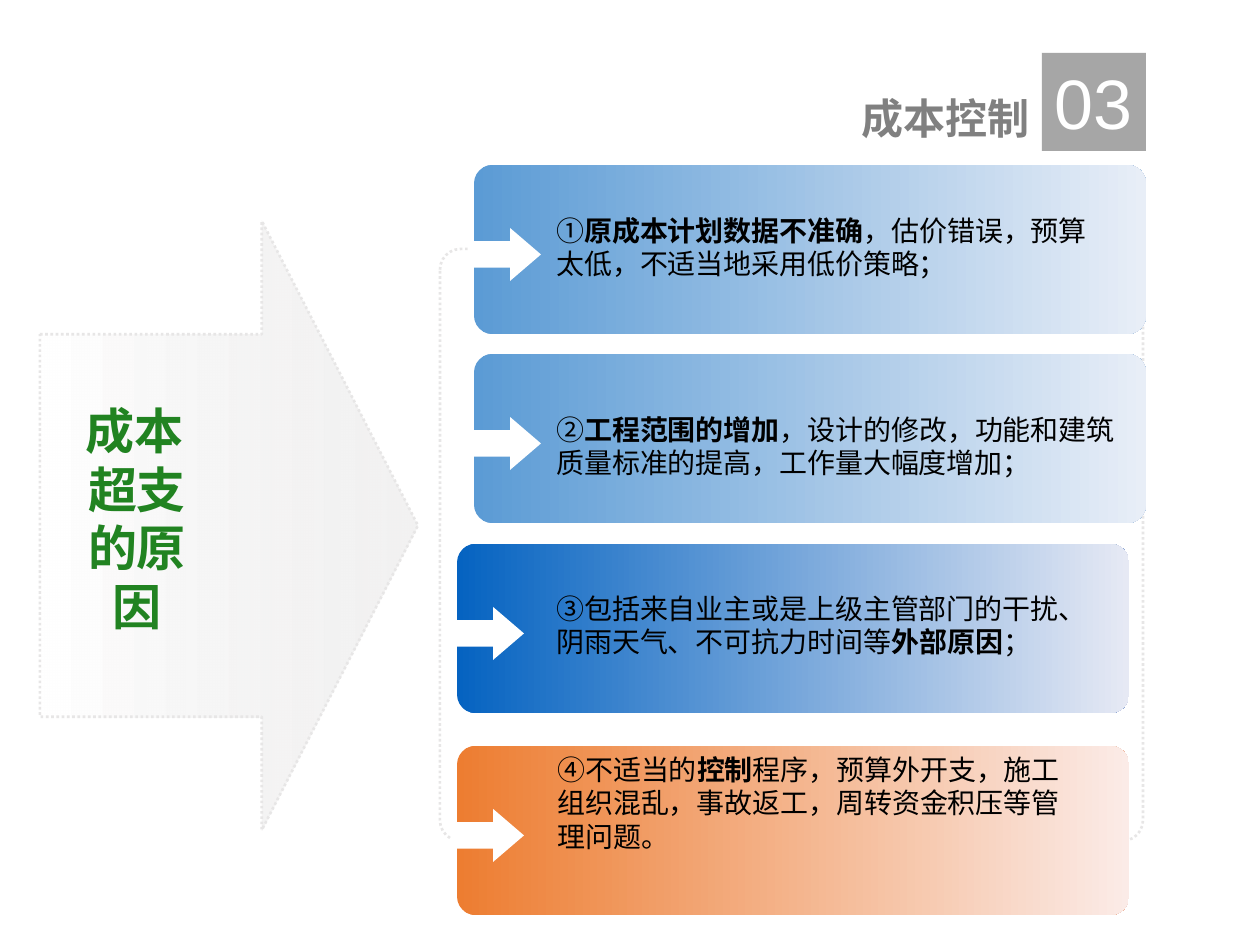
from lxml.etree import SubElement
from pptx import Presentation
from pptx.dml.color import RGBColor
from pptx.enum.dml import MSO_LINE
from pptx.enum.shapes import MSO_SHAPE as Shape
from pptx.enum.text import PP_ALIGN as Align
from pptx.oxml.ns import qn
from pptx.util import Pt

SCALE = 914400 / 126
WHITE = RGBColor(0xFF, 0xFF, 0xFF)
BLACK = RGBColor(0, 0, 0)
PALE = RGBColor(0xE7, 0xE6, 0xE6)
GREEN = RGBColor(0x21, 0x83, 0x21)
GRAY = RGBColor(0x80, 0x80, 0x80)
BADGE = RGBColor(0xA6, 0xA6, 0xA6)
SKY = (RGBColor(0x5B, 0x9B, 0xD5), RGBColor(0xE8, 0xEE, 0xF7))
BLUE = (RGBColor(0x05, 0x63, 0xC1), RGBColor(0xE6, 0xE9, 0xF4))
ORANGE = (RGBColor(0xED, 0x7D, 0x31), RGBColor(0xFB, 0xEB, 0xE7))
LATIN, CJK = "Arial", "Noto Sans CJK SC"

TOPIC = " 成本超支的原因"
SECTION, NUMBER = "成本控制", "03"
CAUSES = [
    {"card": (474, 165), "colors": SKY, "text": (544, 207, 556, 79),
     "runs": [("①", False), ("原成本计划数据不准确", True),
              ("，估价错误，预算太低，不适当地采用低价策略；", False)]},
    {"card": (474, 354), "colors": SKY, "text": (544, 406, 585, 79),
     "runs": [("②", False), ("工程范围的增加", True),
              ("，设计的修改，功能和建筑质量标准的提高，工作量大幅度增加；", False)]},
    {"card": (457, 544), "colors": BLUE, "text": (544, 585, 556, 79),
     "runs": [("③包括来自业主或是上级主管部门的干扰、阴雨天气、不可抗力时间等", False),
              ("外部原因", True), ("；", False)]},
    {"card": (457, 746), "colors": ORANGE, "text": (545, 746, 533, 115),
     "runs": [("④不适当的", False), ("控制", True),
              ("程序，预算外开支，施工组织混乱，事故返工，周转资金积压等管理问题。", False)]},
]
CARD_SIZE = (672, 169)
ARROW_OFFSET, ARROW_SIZE = (-6, 63), (73, 53)


def px(*lengths):
    return [round(length * SCALE) for length in lengths]


def add_block(kind, box, adjustments=(), color=None, gradient=None, dotted=False):
    block = slide.shapes.add_shape(kind, *px(*box))
    block.shadow.inherit = False
    for index, value in enumerate(adjustments):
        block.adjustments[index] = value
    if gradient:
        block.fill.gradient()
        block.fill.gradient_angle = 0
        for stop, position, shade in zip(block.fill.gradient_stops, (0, 1), gradient):
            stop.position, stop.color.rgb = position, shade
    elif color is not None:
        block.fill.solid()
        block.fill.fore_color.rgb = color
    else:
        block.fill.background()
    if dotted:
        block.line.color.rgb = PALE
        block.line.width = Pt(1.5)
        block.line.dash_style = MSO_LINE.ROUND_DOT
    else:
        block.line.fill.background()
    return block


def add_text(box, runs, size, color, font=LATIN, align=Align.LEFT, wrap=True):
    label = slide.shapes.add_textbox(*px(*box))
    label.text_frame.word_wrap = wrap
    paragraph = label.text_frame.paragraphs[0]
    paragraph.alignment = align
    for words, bold in runs:
        run = paragraph.add_run()
        run.text = words
        for key, value in {"size": Pt(size), "bold": bold, "name": font}.items():
            setattr(run.font, key, value)
        run.font.color.rgb = color
        SubElement(run.font._element, qn("a:ea"), typeface=CJK)
    return label


deck = Presentation()
deck.slide_width, deck.slide_height = px(1260, 945)
slide = deck.slides.add_slide(deck.slide_layouts[6])

topic_arrow = add_block(Shape.RIGHT_ARROW, (40, 221, 378, 609), (0.628, 0.413),
                        gradient=(WHITE, PALE), dotted=True)
fading_color = topic_arrow._element.spPr.findall(".//" + qn("a:gs"))[-1][0]
SubElement(fading_color, qn("a:alpha"), val="50000")

topic = add_text((52, 394, 154, 248), [(TOPIC, True)], 28, GREEN, align=Align.CENTER)
indents = topic.text_frame.paragraphs[0]._p.get_or_add_pPr()
for key, length in zip(("marL", "indent"), px(16, -16)):
    indents.set(key, str(length))

add_block(Shape.ROUNDED_RECTANGLE, (440, 249, 703, 592), (0.035,), dotted=True)

for cause in CAUSES:
    left, top = cause["card"]
    add_block(Shape.ROUNDED_RECTANGLE, (left, top, *CARD_SIZE), (0.109,),
              gradient=cause["colors"])
    add_block(Shape.RIGHT_ARROW,
              (left + ARROW_OFFSET[0], top + ARROW_OFFSET[1], *ARROW_SIZE),
              (0.5, 0.583), color=WHITE)
    add_text(cause["text"], cause["runs"], 16, BLACK)

add_text((544, 86, 498, 63), [(SECTION, True)], 24, GRAY, font=CJK, align=Align.RIGHT)
badge_back = add_block(Shape.RECTANGLE, (1042, 53, 96, 92), color=BADGE)
badge_back.line.color.rgb = WHITE
badge_back.line.width = Pt(1)
badge = add_text((1042, 53, 104, 98), [(NUMBER, False)], 40, WHITE, wrap=False)
badge.fill.solid()
badge.fill.fore_color.rgb = BADGE

deck.save("out.pptx")
